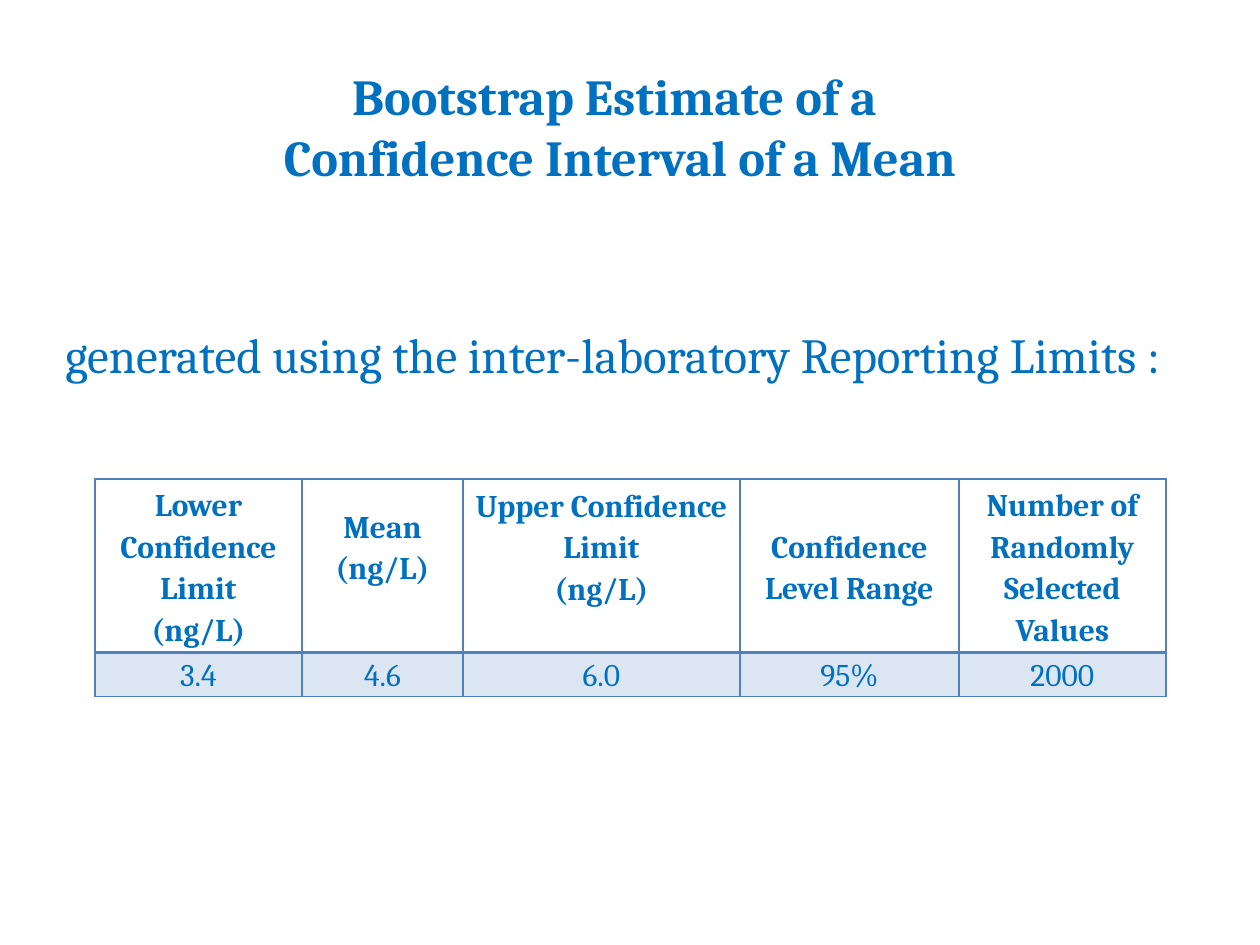
"""Build the slide on the bootstrap confidence interval of a mean."""
from dataclasses import dataclass

from lxml import etree
from pptx import Presentation
from pptx import util as u
from pptx.dml.color import RGBColor
from pptx.enum import text
from pptx.oxml.ns import qn

EMU_PER_PX = 914400 / 126


def px(length):
    return u.Emu(round(length * EMU_PER_PX))


@dataclass(frozen=True)
class Theme:
    font: str = "Cambria"
    ink: str = "0070C0"
    border: str = "4F81BD"
    band: str = "DCE6F2"
    title_size: float = 28.8
    lead_size: float = 28
    table_size: float = 18
    line_spacing: float = 1.15


class SlideBuilder:
    def __init__(self, deck, theme):
        self.theme = theme
        self.slide = deck.slides.add_slide(deck.slide_layouts[5])

    def style(self, frame, size, bold=False, align=text.PP_ALIGN.CENTER, spacing=None):
        for paragraph in frame.paragraphs:
            paragraph.alignment = align
            paragraph.line_spacing = spacing
            for run in paragraph.runs:
                run.font.name = self.theme.font
                run.font.size = u.Pt(size)
                run.font.bold = bold
                run.font.color.rgb = RGBColor.from_string(self.theme.ink)

    def title(self, wording, left, top, width, height, lift):
        heading = self.slide.shapes.title
        heading.left, heading.top, heading.width, heading.height = map(
            px, (left, top, width, height))
        frame = heading.text_frame
        frame.text = wording
        frame.auto_size = text.MSO_AUTO_SIZE.NONE
        frame.vertical_anchor = text.MSO_ANCHOR.MIDDLE
        frame.margin_bottom = px(lift)
        self.style(frame, self.theme.title_size, bold=True)

    def lead(self, wording, left, top, width, height):
        frame = self.slide.shapes.add_textbox(*map(px, (left, top, width, height))).text_frame
        frame.text = wording
        frame.word_wrap = False
        self.style(frame, self.theme.lead_size, align=text.PP_ALIGN.LEFT)

    def border(self, cell, **widths):
        properties = cell._tc.get_or_add_tcPr()
        for position, side in enumerate("LRTB"):
            line = etree.Element(qn(f"a:ln{side}"), w=str(u.Pt(widths.get(side, 1))))
            fill = etree.SubElement(line, qn("a:solidFill"))
            etree.SubElement(fill, qn("a:srgbClr"), val=self.theme.border)
            properties.insert(position, line)

    def cell(self, cell, wording, header, lift=0):
        cell.text = wording
        cell.margin_left = cell.margin_right = px(9)
        cell.margin_top, cell.margin_bottom = 0, px(lift)
        if header:
            cell.vertical_anchor = text.MSO_ANCHOR.MIDDLE
            cell.fill.background()
            self.border(cell, B=2)
        else:
            cell.fill.solid()
            cell.fill.fore_color.rgb = RGBColor.from_string(self.theme.band)
            self.border(cell, T=2)
        self.style(cell.text_frame, self.theme.table_size, bold=header,
                   spacing=self.theme.line_spacing)

    def table(self, columns, left, top, row_heights):
        width = sum(column[0] for column in columns)
        grid = self.slide.shapes.add_table(
            len(row_heights), len(columns),
            *map(px, (left, top, width, sum(row_heights)))).table
        grid.first_row = grid.horz_banding = False
        for row, height in zip(grid.rows, row_heights):
            row.height = px(height)
        for index, (column_width, heading, value, lift) in enumerate(columns):
            grid.columns[index].width = px(column_width)
            self.cell(grid.cell(0, index), heading, True, lift)
            self.cell(grid.cell(1, index), value, False)


def main():
    deck = Presentation()
    deck.slide_width, deck.slide_height = px(1260), px(945)
    builder = SlideBuilder(deck, Theme())
    builder.title("Bootstrap Estimate of a \vConfidence Interval of a Mean",
                  53, 63, 1134, 161, lift=42)
    builder.lead("generated using the inter-laboratory Reporting Limits :", 53, 318, 1183, 72)
    builder.table([
        (207, "Lower Confidence Limit\n(ng/L)", "3.4", 0),
        (161, "Mean\n(ng/L)", "4.6", 40),
        (277, "Upper Confidence Limit\n(ng/L)", "6.0", 40),
        (219, "Confidence Level Range", "95%", 0),
        (207, "Number of Randomly Selected Values", "2000", 0),
    ], 95, 479, (174, 43))
    deck.save("out.pptx")


if __name__ == "__main__":
    main()
